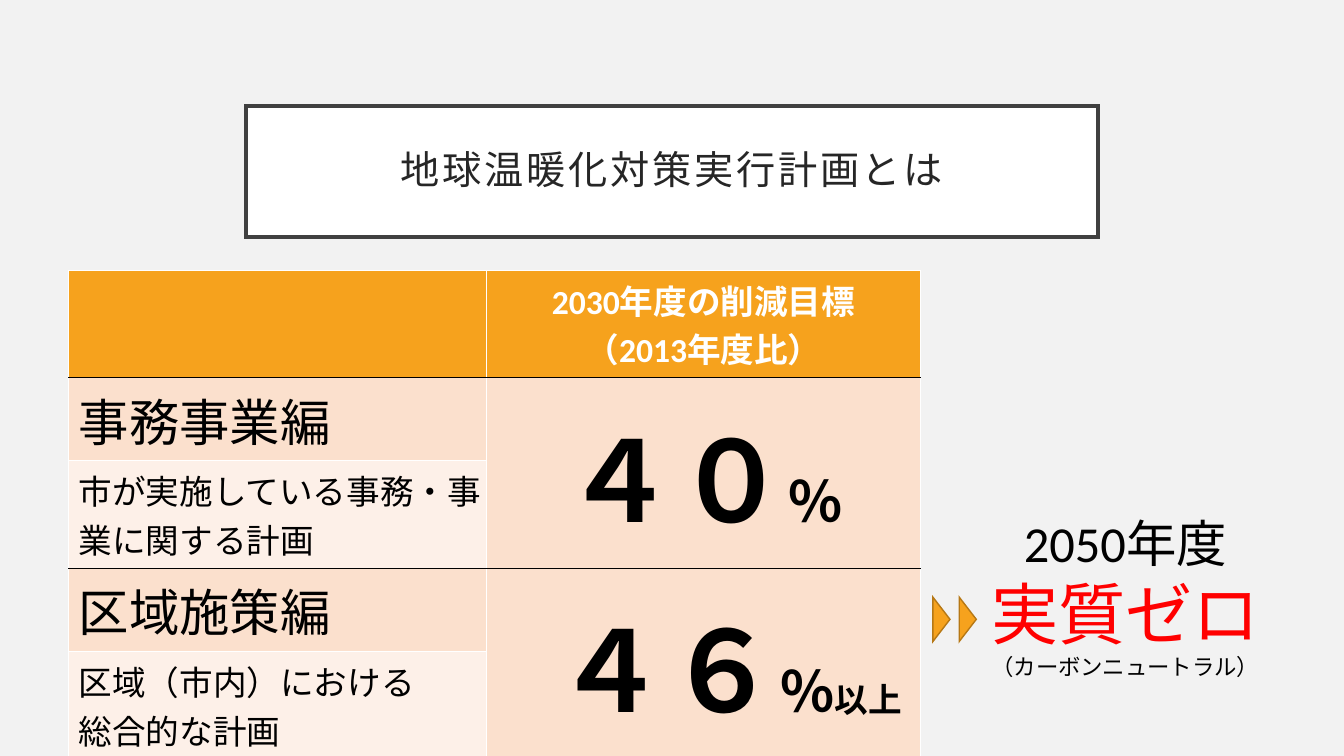
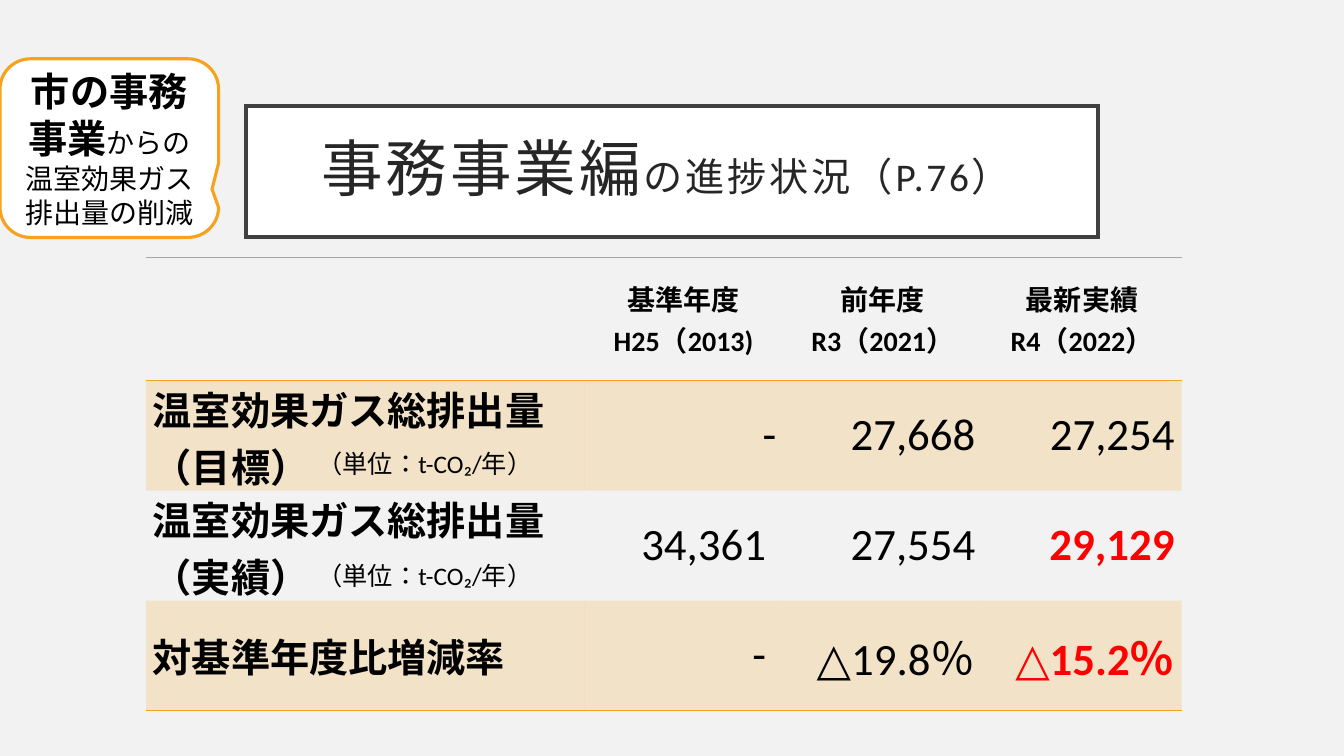
"""Build two slides on the municipal climate action plan."""
from lxml.etree import SubElement
from pptx import Presentation
from pptx.dml.color import RGBColor
from pptx.enum.lang import MSO_LANGUAGE_ID
from pptx.enum.shapes import MSO_SHAPE
from pptx.enum.text import MSO_ANCHOR, MSO_AUTO_SIZE, PP_ALIGN
from pptx.oxml.ns import qn
from pptx.util import Pt

RECTANGLE = MSO_SHAPE.RECTANGLE
TRIANGLE = MSO_SHAPE.ISOSCELES_TRIANGLE
CALLOUT = MSO_SHAPE.ROUNDED_RECTANGULAR_CALLOUT
LEFT, CENTER, RIGHT = PP_ALIGN.LEFT, PP_ALIGN.CENTER, PP_ALIGN.RIGHT
TOP, MIDDLE = MSO_ANCHOR.TOP, MSO_ANCHOR.MIDDLE
FIT_SHAPE = MSO_AUTO_SIZE.SHAPE_TO_FIT_TEXT
JAPANESE = MSO_LANGUAGE_ID.JAPANESE

PAGE_COLOR = RGBColor(0xF2, 0xF2, 0xF2)
WHITE = RGBColor(0xFF, 0xFF, 0xFF)
BLACK = RGBColor(0, 0, 0)
RED = RGBColor(0xFF, 0, 0)
ORANGE = RGBColor(0xF6, 0xA2, 0x1D)
DARK_ORANGE = RGBColor(0xB6, 0x78, 0x15)
PEACH = RGBColor(0xFB, 0xE0, 0xCD)
PALE_PEACH = RGBColor(0xFD, 0xF0, 0xE8)
FRAME_GRAY = RGBColor(0x40, 0x40, 0x40)
TITLE_GRAY = RGBColor(0x26, 0x26, 0x26)
RULE_GRAY = RGBColor(0xA6, 0xA6, 0xA6)

BODY_FONT, JAPANESE_FONT = "Calibri", "Noto Sans CJK JP"
NO_STYLE = "{2D5ABB26-0587-4C30-8999-92F81FD0307C}"

PLAN_TITLE = [("地球温暖化対策実行計画とは", {})]
PLAN_HEADER = [[("2030年度の削減目標", {})], [("（2013年度比）", {})]]
PLANS = [
    ("事務事業編", ["市が実施している事務・事業に関する計画"],
     [("４０", {}), ("％", {"size": 40})], 7.2),
    ("区域施策編", ["区域（市内）における", "総合的な計画"],
     [("４６", {}), ("％", {"size": 40}), ("以上", {"size": 24})], 43),
]
PLAN_COLUMNS = [298.5, 310]
PLAN_ROWS = [52, 52, 54, 52, 54]
PLAN_EDGES = [WHITE, BLACK, WHITE, BLACK, WHITE, WHITE]
ZERO_GOAL = [
    [("2050年度", {"size": 36})],
    [("実質ゼロ", {"size": 48, "color": RED})],
    [("（カーボンニュートラル）", {"size": 16})],
]
ARROW_LEFTS = [656.6, 675.4]

PROGRESS_TITLE = [("事務事業編", {"size": 44}), ("の進捗状況（P.76） ", {})]
PROGRESS_HEADER = [("基準年度", "H25（2013)"), ("前年度", "R3（2021）"),
                   ("最新実績", "R4（2022）")]
PROGRESS = [
    ("温室効果ガス総排出量（目標）", ["-", "27,668", "27,254"]),
    ("温室効果ガス総排出量（実績）", ["34,361 ", "27,554", "29,129"]),
    ("対基準年度比増減率", ["- ", "△19.8％", "△15.2％"]),
]
HIGHLIGHTS = {"29,129", "△15.2％"}
PROGRESS_COLUMNS = [313, 142.3, 142.3, 142.3]
PROGRESS_ROWS = [88, 78.6, 78.6, 78.6]
UNIT = "（単位：t-CO₂/年）"
UNIT_TOPS = [316.8, 396.8]
CALLOUT_TEXT = [
    [("市の事務事業", {"size": 28, "bold": True}), ("からの", {})],
    [("温室効果ガス排出量の削減", {})],
]


def write(holder, paragraphs, align=LEFT, anchor=MIDDLE, insets=(7.2, 3.6, 7.2, 3.6),
          line_spacing=None, **base):
    """Write paragraphs of (text, format) spans into a shape or table cell."""
    frame = holder.text_frame
    frame.word_wrap = True
    is_cell = hasattr(holder, "margin_left")
    box = holder if is_cell else frame
    box.vertical_anchor = anchor
    box.margin_left, box.margin_top, box.margin_right, box.margin_bottom = map(Pt, insets)
    for index, spans in enumerate(paragraphs):
        para = frame.add_paragraph() if index else frame.paragraphs[0]
        para.alignment = align
        if line_spacing:
            para.line_spacing = line_spacing
        for text, changes in spans:
            look = {"size": 18, "color": BLACK, "bold": False, "font": BODY_FONT,
                    "tracking": 0, **base, **changes}
            span = para.add_run()
            span.text = text
            span.font.size = Pt(look["size"])
            span.font.bold = look["bold"]
            span.font.color.rgb = look["color"]
            span.font.name = look["font"]
            span.font.language_id = JAPANESE
            properties = span.font._element
            SubElement(properties, qn("a:ea"),
                       typeface=JAPANESE_FONT if is_cell else look["font"])
            if look["tracking"]:
                properties.set("spc", str(look["tracking"] * 100))


def add_box(page, kind, left, top, width, height, fill, line, weight):
    """Add a filled and outlined preset shape with sharp corners."""
    box = page.shapes.add_shape(kind, Pt(left), Pt(top), Pt(width), Pt(height))
    box.shadow.inherit = False
    box.fill.solid()
    box.fill.fore_color.rgb = fill
    box.line.color.rgb = line
    box.line.width = Pt(weight)
    SubElement(box.line._get_or_add_ln(), qn("a:miter"), lim="800000")
    return box


def add_page(deck, title):
    """Add a page with the shared background and framed title."""
    page = deck.slides.add_slide(deck.slide_layouts[6])
    page.background.fill.solid()
    page.background.fill.fore_color.rgb = PAGE_COLOR
    box = add_box(page, RECTANGLE, 175.8, 75.8, 608.6, 93.6, WHITE, FRAME_GRAY, 2.5)
    write(box, [title], align=CENTER, insets=(14.4,) * 4, line_spacing=0.9,
          size=28, color=TITLE_GRAY, tracking=2)
    return page


def add_grid(page, left, top, columns, rows):
    """Add an unstyled table with the given column widths and row heights."""
    table = page.shapes.add_table(len(rows), len(columns), Pt(left), Pt(top),
                                  Pt(sum(columns)), Pt(sum(rows))).table
    table._tbl.tblPr.find(qn("a:tableStyleId")).text = NO_STYLE
    for column, width in zip(table.columns, columns):
        column.width = Pt(width)
    for row, height in zip(table.rows, rows):
        row.height = Pt(height)
    return table


def paint(cell, fill=None, alpha=None, **edges):
    """Set a cell's borders by side (L, R, T, B), then its fill."""
    properties = cell._tc.get_or_add_tcPr()
    for side in "LRTB":
        if edges.get(side) is not None:
            line = SubElement(properties, qn(f"a:ln{side}"), w=str(Pt(1)))
            solid = SubElement(line, qn("a:solidFill"))
            SubElement(solid, qn("a:srgbClr"), val=str(edges[side]))
    if fill is None:
        cell.fill.background()
        return
    cell.fill.solid()
    cell.fill.fore_color.rgb = fill
    if alpha:
        color = properties.find(qn("a:solidFill")).find(qn("a:srgbClr"))
        SubElement(color, qn("a:alpha"), val=str(alpha * 1000))


def add_note(page, left, top, width, height, paragraphs, **look):
    """Add a text box that grows with its text."""
    box = page.shapes.add_textbox(Pt(left), Pt(top), Pt(width), Pt(height))
    write(box, paragraphs, anchor=TOP, **look)
    box.text_frame.auto_size = FIT_SHAPE


def build_plan_page(deck):
    """Build the page with the reduction targets."""
    page = add_page(deck, PLAN_TITLE)
    table = add_grid(page, 49, 193, PLAN_COLUMNS, PLAN_ROWS)
    for row in range(len(PLAN_ROWS)):
        label_fill = ORANGE if row == 0 else PEACH if row % 2 else PALE_PEACH
        top, bottom = PLAN_EDGES[row:row + 2]
        paint(table.cell(row, 0), label_fill, L=WHITE, R=WHITE, T=top, B=bottom)
        if row and row % 2:
            bottom = PLAN_EDGES[row + 2]
        elif row:
            top = None
        paint(table.cell(row, 1), PEACH if row else ORANGE,
              L=WHITE, R=WHITE, T=top, B=bottom)
    write(table.cell(0, 1), PLAN_HEADER, align=CENTER, size=24, color=WHITE, bold=True)
    for index, (name, summary, target, indent) in enumerate(PLANS):
        row = 1 + 2 * index
        table.cell(row, 1).merge(table.cell(row + 1, 1))
        write(table.cell(row, 0), [[(name, {})]], size=36)
        write(table.cell(row + 1, 0), [[(line, {})] for line in summary],
              insets=(7.2, 3.6, 0, 3.6), size=24)
        write(table.cell(row, 1), [target], align=CENTER, insets=(indent, 3.6, 7.2, 3.6),
              size=80, bold=True, font=JAPANESE_FONT)
    for left in ARROW_LEFTS:
        arrow = add_box(page, TRIANGLE, left, 436.3, 31.7, 12.2, ORANGE, DARK_ORANGE, 1)
        arrow.rotation = 90
    add_note(page, 697.7, 362.2, 212.4, 128.2, ZERO_GOAL, align=CENTER)


def build_progress_page(deck):
    """Build the page with emissions by year."""
    page = add_page(deck, PROGRESS_TITLE)
    table = add_grid(page, 104.2, 183.8, PROGRESS_COLUMNS, PROGRESS_ROWS)
    insets = (5, 0, 5, 0)
    last = len(PROGRESS)
    for column in range(len(PROGRESS_COLUMNS)):
        paint(table.cell(0, column), T=RULE_GRAY, B=ORANGE)
        for row in range(1, last + 1):
            paint(table.cell(row, column), ORANGE if row % 2 else None, alpha=20,
                  B=ORANGE if row == last else None)
    for column, lines in enumerate(PROGRESS_HEADER, 1):
        write(table.cell(0, column), [[(line, {})] for line in lines], align=CENTER,
              insets=insets, size=20, bold=True)
    for row, (name, values) in enumerate(PROGRESS, 1):
        write(table.cell(row, 0), [[(name, {})]], insets=insets, size=28, bold=True)
        for column, value in enumerate(values, 1):
            marked = value in HIGHLIGHTS
            write(table.cell(row, column), [[(value, {})]], align=RIGHT, insets=insets,
                  size=32, bold=marked, color=RED if marked else BLACK)
    for top in UNIT_TOPS:
        add_note(page, 201.6, top, 207.4, 29, [[(UNIT, {})]], insets=(25.2, 3.6, 7.2, 3.6))
    callout = add_box(page, CALLOUT, 0, 42, 156.2, 127.6, WHITE, ORANGE, 2.25)
    for index, value in enumerate((0.47, 0.23, 0.17)):
        callout.adjustments[index] = value
    write(callout, CALLOUT_TEXT, align=CENTER, size=20)


def main():
    """Build and save the deck."""
    deck = Presentation()
    deck.slide_width, deck.slide_height = Pt(960), Pt(540)
    build_plan_page(deck)
    build_progress_page(deck)
    deck.save("out.pptx")


if __name__ == "__main__":
    main()
